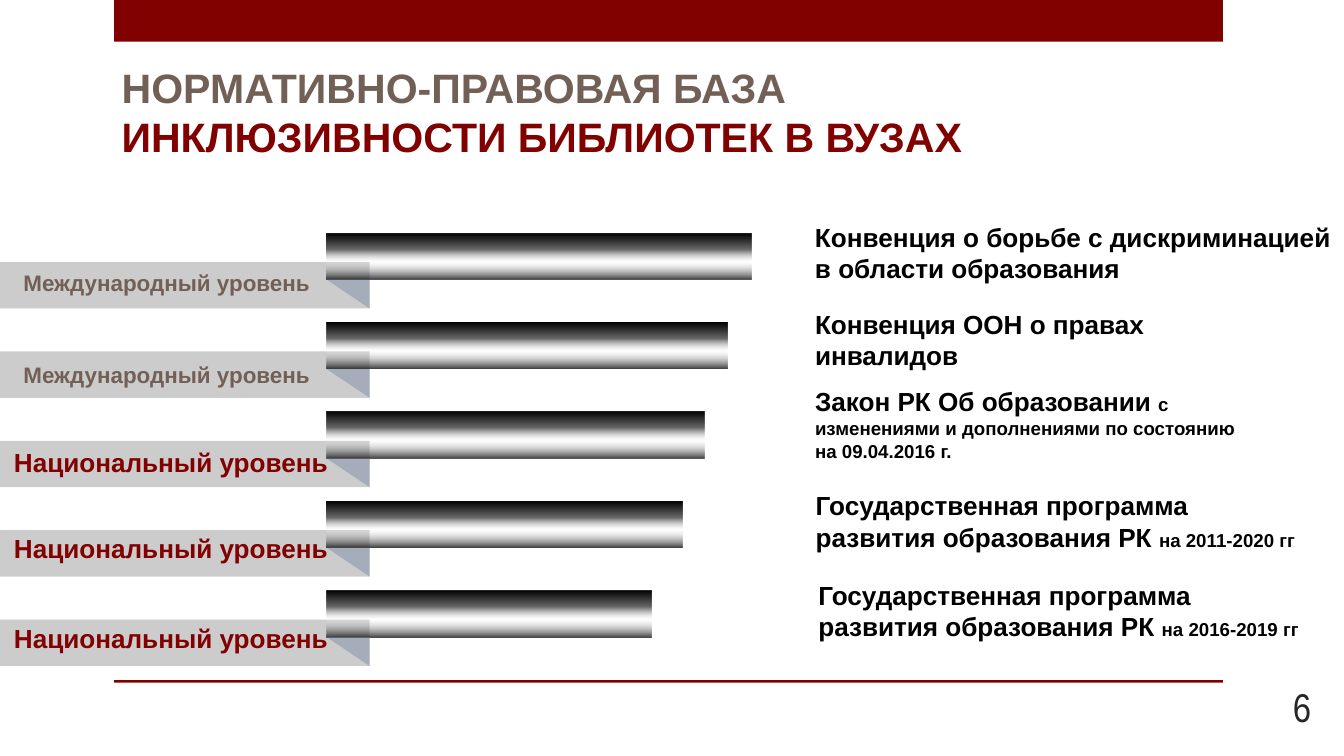
from dataclasses import dataclass
from lxml.etree import SubElement as Sub
from pptx import Presentation
from pptx.dml.color import RGBColor as Rgb
from pptx.enum.shapes import MSO_SHAPE as Kind
from pptx.enum.text import MSO_ANCHOR as Anchor, MSO_AUTO_SIZE as Fit, PP_ALIGN as Align
from pptx.oxml.ns import qn
from pptx.util import Pt

PX = 9144


@dataclass(frozen=True)
class Theme:
    font: str = "Arial"
    thin: str = "Arial Narrow"
    red: str = "810000"
    brown: str = "726056"
    black: str = "000000"
    grey: str = "262626"
    blue: str = "808DA9"
    white: str = "FFFFFF"
    head: int = 44
    page: int = 43
    body: int = 28
    label: int = 24
    small: int = 20


class Deck:
    def __init__(self, theme, wide, high):
        self.theme = theme
        self.show = Presentation()
        self.show.slide_width = wide * PX
        self.show.slide_height = high * PX
        self.slide = self.show.slides.add_slide(self.show.slide_layouts[5])

    def style(self, font, size, color, name=None, bold=True):
        font.name = name or self.theme.font
        font.size = Pt(size)
        font.bold = bold
        font.color.rgb = Rgb.from_string(color)

    def inset(self, frame):
        frame.margin_left = frame.margin_right = 18 * PX
        frame.margin_top = frame.margin_bottom = 9 * PX

    def title(self, box, parts):
        shape = self.slide.shapes.title
        shape.left, shape.top, shape.width, shape.height = (v * PX for v in box)
        frame = shape.text_frame
        frame.auto_size = Fit.NONE
        frame.vertical_anchor = Anchor.BOTTOM
        self.inset(frame)
        para = frame.paragraphs[0]
        para.alignment = Align.LEFT
        for text, color in parts:
            run = para.add_run()
            run.text = text
            self.style(run.font, self.theme.head, color)

    def block(self, box, color, kind=Kind.RECTANGLE, alpha=None):
        shape = self.slide.shapes.add_shape(kind, *(v * PX for v in box))
        shape.shadow.inherit = False
        shape.line.fill.background()
        shape.fill.solid()
        shape.fill.fore_color.rgb = Rgb.from_string(color)
        if alpha:
            tint = next(shape.element.spPr.iter(qn("a:srgbClr")))
            Sub(tint, qn("a:alpha"), val=str(alpha * 1000))
        return shape

    def tube(self, box):
        black, white = self.theme.black, self.theme.white
        shape = self.block(box, black)
        shape.fill.gradient()
        shape.fill.gradient_angle = 270
        stops = next(shape.element.spPr.iter(qn("a:gsLst")))
        for stop in list(stops):
            stops.remove(stop)
        for pos, color, alpha in ((0, black, 100), (35, black, 59),
                                  (61, white, 20), (100, black, 77)):
            stop = Sub(stops, qn("a:gs"), pos=str(pos * 1000))
            tint = Sub(stop, qn("a:srgbClr"), val=color)
            Sub(tint, qn("a:alpha"), val=str(alpha * 1000))

    def fold(self, box):
        shape = self.block(box, self.theme.blue, Kind.RIGHT_TRIANGLE, 50)
        shape.rotation = 180

    def text(self, box, lines, size, color, name=None, bold=True):
        shape = self.slide.shapes.add_textbox(*(v * PX for v in box))
        frame = shape.text_frame
        frame.word_wrap = True
        for i, line in enumerate(lines):
            para = frame.add_paragraph() if i else frame.paragraphs[0]
            self.style(para.font, size, color, name, bold)
            para.add_run().text = line
        return frame

    def label(self, box, text, size, color):
        self.text(box, [text], size, color).auto_size = Fit.SHAPE_TO_FIT_TEXT

    def note(self, box, lines, tail):
        theme = self.theme
        frame = self.text(box, lines, theme.body, theme.black)
        if tail:
            run = frame.paragraphs[-1].add_run()
            run.text = tail
            run.font.size = Pt(theme.small)

    def number(self, box, text):
        theme = self.theme
        frame = self.text(box, [text], theme.page, theme.grey, theme.thin, False)
        frame.vertical_anchor = Anchor.MIDDLE
        self.inset(frame)
        frame.paragraphs[0].alignment = Align.RIGHT


def main():
    theme = Theme()
    deck = Deck(theme, 2000, 1125)
    deck.block((170, 0, 1650, 62), theme.red)
    deck.block((170, 1012, 1650, 4), theme.red)
    deck.title((163, 31, 1483, 217), [
        ("НОРМАТИВНО-ПРАВОВАЯ БАЗА ", theme.brown),
        ("ИНКЛЮЗИВНОСТИ БИБЛИОТЕК В ВУЗАХ", theme.red)])
    deck.number((1802, 1022, 167, 60), "6")

    world = ("Международный уровень", theme.label, theme.brown)
    home = ("Национальный уровень", theme.body, theme.red)
    rows = [
        (632, (25, 395, 525, 50), world),
        (597, (25, 533, 458, 50), world),
        (563, (11, 659, 524, 57), home),
        (529, (11, 788, 502, 57), home),
        (484, (11, 921, 538, 57), home),
    ]
    for i, (wide, box, level) in enumerate(rows):
        top = 347 + i * 133
        deck.block((0, top + 43, 550, 69), theme.black, alpha=20)
        deck.tube((486, top, wide, 69))
        deck.fold((486, top + 69, 64, 43))
        deck.label(box, *level)

    plan = ["Государственная программа развития образования РК "]
    notes = [
        ((1203, 324, 840, 123),
         ["Конвенция о борьбе с дискриминацией", "в области образования"], ""),
        ((1203, 454, 648, 79), ["Конвенция ООН о правах инвалидов"], ""),
        ((1203, 569, 648, 147), ["Закон РК Об образовании "],
         "с изменениями и дополнениями по состоянию на 09.04.2016 г."),
        ((1204, 724, 752, 100), plan, "на 2011-2020 гг"),
        ((1208, 857, 760, 114), plan, "на 2016-2019 гг"),
    ]
    for box, lines, tail in notes:
        deck.note(box, lines, tail)
    deck.show.save("out.pptx")


if __name__ == "__main__":
    main()
